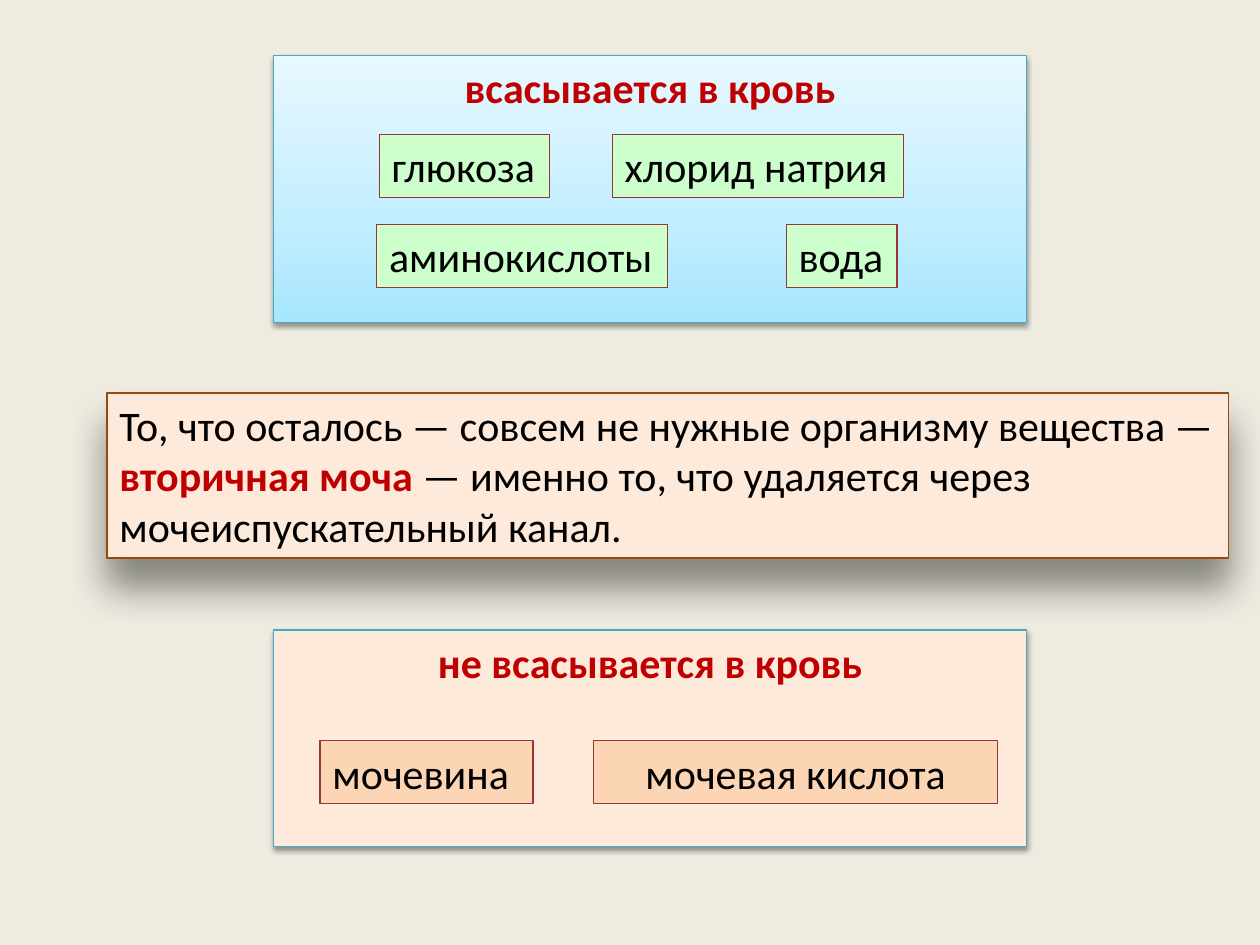
from copy import deepcopy

from lxml.etree import SubElement
from pptx import Presentation
from pptx.dml.color import RGBColor
from pptx.enum.shapes import MSO_SHAPE
from pptx.enum.text import MSO_ANCHOR, PP_ALIGN as Align
from pptx.oxml.ns import qn
from pptx.util import Inches, Pt

THEME = {
    "font": "Calibri", "size": 24, "line_width": 0.75,
    "background": "EEECE1", "text": "000000", "accent": "C00000",
    "panel_line": "46AAC5", "box_line": "953735", "summary_line": "984807",
    "green": "CCFFCC", "orange": "FCD5B5", "peach": "FDEADA",
    "blue_gradient": [(0, "A7E6FF"), (0.35, "C1EDFF"), (1, "E7F8FF")],
}
# Shadows: opacity in percent, blur and distance in points
PANEL_SHADOW = (38, 3.1, 1.6)
SUMMARY_SHADOW = (43, 22, 16)

PANEL_LEFT, PANEL_WIDTH, BOX_HEIGHT = 2.17, 5.98, 0.5

# Each box: text, left, top, width, alignment
PANELS = [
    {"title": "всасывается в кровь", "top": 0.44, "height": 2.12,
     "fill": "blue_gradient", "box_fill": "green",
     "boxes": [("глюкоза", 3.01, 1.07, 1.35, Align.LEFT),
               ("аминокислоты", 2.99, 1.78, 2.31, Align.LEFT),
               ("хлорид натрия", 4.86, 1.07, 2.31, Align.LEFT),
               ("вода", 6.24, 1.78, 0.88, Align.LEFT)]},
    {"title": "не всасывается в кровь", "top": 5, "height": 1.72,
     "fill": "peach", "box_fill": "orange",
     "boxes": [("мочевина", 2.54, 5.88, 1.69, Align.LEFT),
               ("мочевая кислота", 4.71, 5.88, 3.21, Align.CENTER)]},
]
# Each run: text, emphasized
SUMMARY = [
    ("То, что осталось — совсем не нужные организму вещества — ", False),
    ("вторичная моча", True),
    (" — именно то, что удаляется через мочеиспускательный канал.", False),
]


def color(name):
    return RGBColor.from_string(THEME[name])


def fill_gradient(shape, stops):
    shape.fill.gradient()
    shape.fill.gradient_angle = 90
    stop_list = shape._element.spPr.find(qn("a:gradFill")).find(qn("a:gsLst"))
    stop_list.insert(1, deepcopy(stop_list[0]))
    for stop, (position, value) in zip(shape.fill.gradient_stops, stops):
        stop.position = position
        stop.color.rgb = RGBColor.from_string(value)


def add_shadow(shape, opacity, blur, distance):
    effects = shape._element.spPr.find(qn("a:effectLst"))
    shadow = SubElement(effects, qn("a:outerShdw"), blurRad=str(Pt(blur)),
                        dist=str(Pt(distance)), dir="5400000", rotWithShape="0")
    shade = SubElement(shadow, qn("a:srgbClr"), val="000000")
    SubElement(shade, qn("a:alpha"), val=str(opacity * 1000))


def add_box(slide, position, fill, line, runs, align=Align.LEFT, shadow=None):
    shape = slide.shapes.add_shape(MSO_SHAPE.RECTANGLE, *map(Inches, position))
    shape.shadow.inherit = False
    if shadow:
        add_shadow(shape, *shadow)
    if isinstance(THEME[fill], list):
        fill_gradient(shape, THEME[fill])
    else:
        shape.fill.solid()
        shape.fill.fore_color.rgb = color(fill)
    shape.line.color.rgb = color(line)
    shape.line.width = Pt(THEME["line_width"])

    frame = shape.text_frame
    frame.word_wrap = True
    frame.vertical_anchor = MSO_ANCHOR.TOP
    if align == Align.LEFT:
        frame.margin_right = 0  # keeps tight labels on one line
    paragraph = frame.paragraphs[0]
    paragraph.alignment = align
    paragraph.font.name = THEME["font"]
    paragraph.font.size = Pt(THEME["size"])
    for text, emphasized in runs:
        run = paragraph.add_run()
        run.text = text
        run.font.bold = emphasized
        run.font.color.rgb = color("accent" if emphasized else "text")


def main():
    presentation = Presentation()
    presentation.slide_width, presentation.slide_height = Inches(10), Inches(7.5)
    slide = presentation.slides.add_slide(presentation.slide_layouts[6])
    slide.background.fill.solid()
    slide.background.fill.fore_color.rgb = color("background")

    # Panels with their substances
    for panel in PANELS:
        position = (PANEL_LEFT, panel["top"], PANEL_WIDTH, panel["height"])
        add_box(slide, position, panel["fill"], "panel_line",
                [(panel["title"], True)], Align.CENTER, PANEL_SHADOW)
        for text, left, top, width, align in panel["boxes"]:
            add_box(slide, (left, top, width, BOX_HEIGHT), panel["box_fill"],
                    "box_line", [(text, False)], align)

    # Summary between the panels
    add_box(slide, (0.85, 3.12, 8.9, 1.31), "peach", "summary_line", SUMMARY,
            shadow=SUMMARY_SHADOW)
    presentation.save("out.pptx")


if __name__ == "__main__":
    main()
